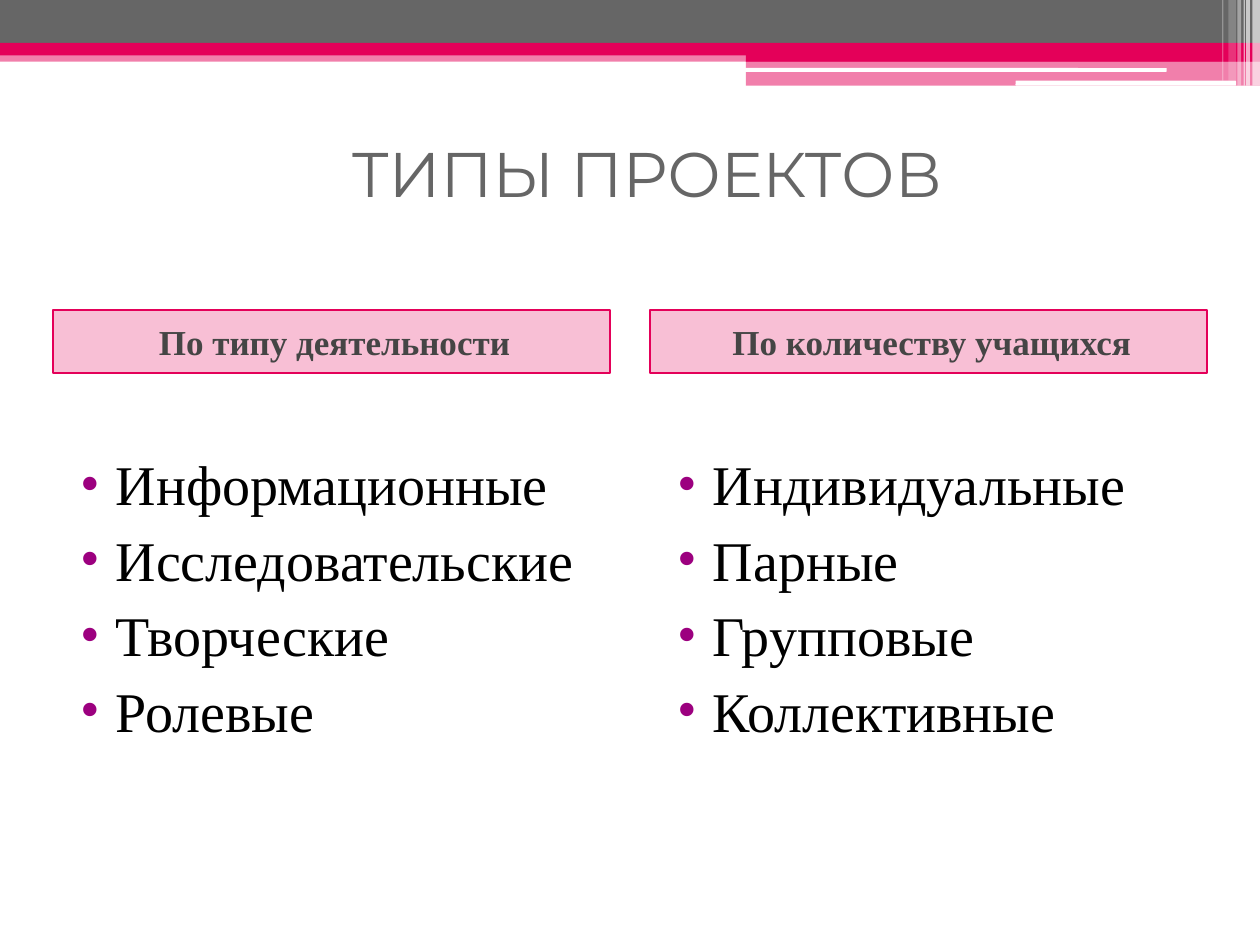
import pptx
import pptx.util
import pptx.dml.color
import pptx.enum.shapes
import pptx.enum.text
import pptx.oxml
import pptx.oxml.ns

Pt = pptx.util.Pt
MSO = pptx.enum.shapes.MSO_SHAPE
ALIGN = pptx.enum.text.PP_ALIGN
ANCHOR = pptx.enum.text.MSO_ANCHOR
RGB = pptx.dml.color.RGBColor.from_string
NS = pptx.oxml.ns.nsdecls("a")

THEME = {
    "gray": "666666", "pink": "E40059", "white": "FFFFFF",
    "heading": "454545", "ink": "000000", "bullet": "9C007F",
    "title_font": "Montserrat", "body_font": "Times New Roman",
    "title_pt": 36, "heading_pt": 20, "item_pt": 32,
}

prs = pptx.Presentation()
prs.slide_width = pptx.util.Inches(10)
prs.slide_height = pptx.util.Inches(7.5)
s = prs.slides.add_slide(prs.slide_layouts[6])
col, row = prs.slide_width / 100, prs.slide_height / 100


def add_box(x, y, w, h, color, opacity=100, kind=MSO.RECTANGLE):
    sp = s.shapes.add_shape(kind, int(x * col), int(y * row), int(w * col), int(h * row))
    sp.shadow.inherit = False
    sp.line.fill.background()
    sp.fill.solid()
    sp.fill.fore_color.rgb = RGB(THEME[color])
    if opacity < 100:
        clr = sp.fill._xPr.find(".//" + pptx.oxml.ns.qn("a:srgbClr"))
        clr.append(pptx.oxml.parse_xml(f'<a:alpha {NS} val="{opacity * 1000}"/>'))
    return sp


def add_text(tf, lines, font, para, anchor=ANCHOR.MIDDLE):
    tf.word_wrap = True
    tf.vertical_anchor = anchor
    for i, line in enumerate(lines):
        p = tf.paragraphs[0] if i == 0 else tf.add_paragraph()
        for name, value in para.items():
            setattr(p, name, value)
        r = p.add_run()
        r.text = line
        r.font.color.rgb = RGB(font["color"])
        for name in ("name", "size", "bold"):
            setattr(r.font, name, font[name])
    return tf.paragraphs


# Banner across the top
for x, y, w, h, color, opacity in [
    (0, 5.33, 100, 1.2, "pink", 50),
    (0, 0, 100, 4.53, "gray", 100),
    (0, 4.53, 100, 1.33, "pink", 100),
    (59.2, 5.2, 40.8, 1.33, "pink", 100),
    (59.2, 6.4, 40.8, 2.67, "pink", 50),
]:
    add_box(x, y, w, h, color, opacity)

for x, y, w, h in [(59.1, 7.2, 33.5, 0.4), (80.6, 8.53, 17.5, 0.53)]:
    add_box(x, y, w, h, "white", kind=MSO.ROUNDED_RECTANGLE)

# Translucent stripes at the right edge
for x, w, h, opacity in [
    (99.4, 0.6, 9.07, 65), (98.9, 0.3, 9.07, 65), (98.7, 0.1, 9.07, 60),
    (98.2, 0.3, 9.07, 40), (97.5, 0.6, 8.53, 20), (97, 0.1, 8.53, 30),
]:
    add_box(x, 0, w, h, "white", opacity)

# Title
sp = s.shapes.add_textbox(int(5.5 * col), int(10.4 * row), int(91.7 * col), int(15.6 * row))
title_font = {"name": THEME["title_font"], "size": Pt(THEME["title_pt"]),
              "bold": False, "color": THEME["gray"]}
add_text(sp.text_frame, ["ТИПЫ ПРОЕКТОВ"], title_font, {"alignment": ALIGN.CENTER})

# Two columns: heading bar and bulleted list
heading_font = {"name": THEME["body_font"], "size": Pt(THEME["heading_pt"]),
                "bold": True, "color": THEME["heading"]}
item_font = {"name": THEME["body_font"], "size": Pt(THEME["item_pt"]),
             "bold": False, "color": THEME["ink"]}
margin, width, gap = 4.2, 44.2, 3.2
columns = [
    ("По типу деятельности",
     ["Информационные", "Исследовательские", "Творческие", "Ролевые"]),
    ("По количеству учащихся",
     ["Индивидуальные", "Парные", "Групповые", "Коллективные"]),
]
for i, (heading, items) in enumerate(columns):
    x = margin + i * (width + gap)
    sp = add_box(x, 32.8, width, 6.67, "pink", 25)
    sp.line.color.rgb = RGB(THEME["pink"])
    sp.line.width = Pt(1)
    for p in add_text(sp.text_frame, [heading], heading_font,
                      {"alignment": ALIGN.CENTER, "space_before": Pt(3)}):
        p._p.get_or_add_pPr().set("marL", str(int(0.5 * col)))

    sp = s.shapes.add_textbox(int(x * col), int(46.93 * row), int(width * col), int(49.2 * row))
    for p in add_text(sp.text_frame, items, item_font,
                      {"alignment": ALIGN.LEFT, "space_before": Pt(4.7)}, ANCHOR.TOP):
        pPr = p._p.get_or_add_pPr()
        pPr.set("marL", str(int(4 * col)))
        pPr.set("indent", str(int(-2.8 * col)))
        for xml in (f'<a:buClr {NS}><a:srgbClr val="{THEME["bullet"]}"/></a:buClr>',
                    f'<a:buFont {NS} typeface="{THEME["body_font"]}"/>',
                    f'<a:buChar {NS} char="•"/>'):
            pPr.append(pptx.oxml.parse_xml(xml))

prs.save("out.pptx")
